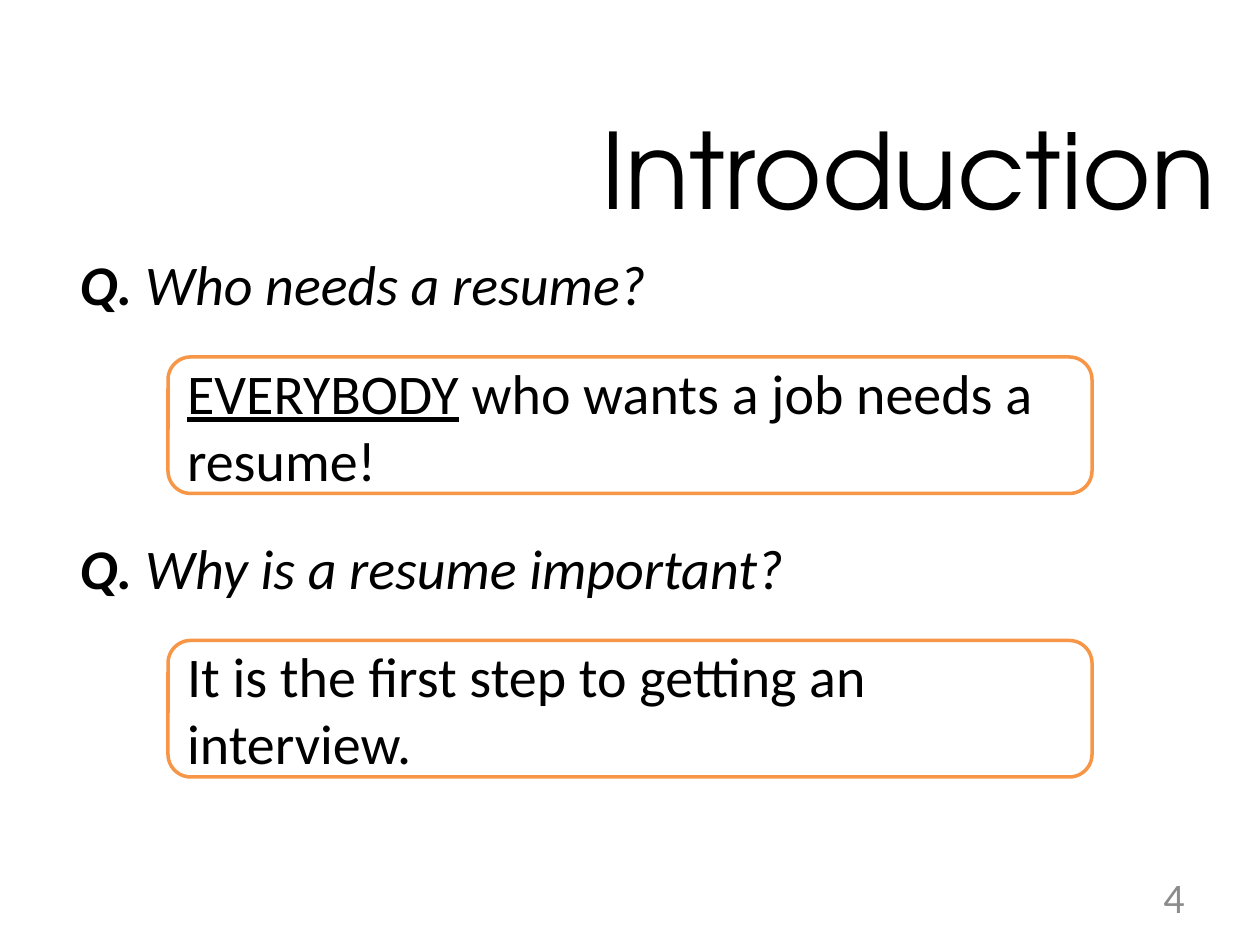
"""Build the introduction slide: two resume questions, each with a framed answer."""
from pptx import Presentation
from pptx import util as u
from pptx.dml.color import RGBColor
from pptx.enum import shapes, text

COLOURS = {"ink": "000000", "paper": "FFFFFF", "frame": "F79646", "number": "8C8C8C"}
COLUMNS, ROWS = 120, 90
QUESTION_TOP, ANSWER_TOP, PAIR_STEP = 21.5, 34, 27

deck = Presentation()
deck.slide_width, deck.slide_height = u.Inches(10), u.Inches(7.5)
column, row = deck.slide_width / COLUMNS, deck.slide_height / ROWS
page = deck.slides.add_slide(deck.slide_layouts[5])


def cells(left, top, width, height):
    return [int(left * column), int(top * row), int(width * column), int(height * row)]


def write(box, *spans, size=32, font="Calibri", colour="ink", align=text.PP_ALIGN.LEFT):
    frame = box.text_frame
    frame.word_wrap = True
    frame.auto_size = text.MSO_AUTO_SIZE.NONE
    frame.vertical_anchor = text.MSO_ANCHOR.MIDDLE
    para = frame.paragraphs[0]
    para.alignment = align
    for words, style in spans:
        span = para.add_run()
        span.text = words
        span.font.size, span.font.name = u.Pt(size), font
        span.font.color.rgb = RGBColor.from_string(COLOURS[colour])
        for name, value in style.items():
            setattr(span.font, name, value)


title = page.shapes.title
title.left, title.top, title.width, title.height = cells(53, 5, 67, 22)
write(title, ("Introduction", {}), size=60, font="TeX Gyre Adventor",
      align=text.PP_ALIGN.CENTER)

pairs = [
    ("Who needs a resume?",
     [("EVERYBODY", {"underline": True}), (" who wants a job needs a resume!", {})]),
    ("Why is a resume important?",
     [("It is the first step to getting an interview.", {})]),
]
for index, (question, answer) in enumerate(pairs):
    offset = index * PAIR_STEP
    answer_box = page.shapes.add_shape(
        shapes.MSO_SHAPE.ROUNDED_RECTANGLE, *cells(16, ANSWER_TOP + offset, 88, 13))
    question_box = page.shapes.add_shape(
        shapes.MSO_SHAPE.RECTANGLE, *cells(6.4, QUESTION_TOP + offset, 109, 11))
    for box in (answer_box, question_box):
        box.shadow.inherit = False
        box.fill.solid()
        box.fill.fore_color.rgb = RGBColor.from_string(COLOURS["paper"])
    answer_box.line.color.rgb = RGBColor.from_string(COLOURS["frame"])
    answer_box.line.width = u.Pt(2)
    question_box.line.fill.background()
    write(answer_box, *answer)
    write(question_box, ("Q. ", {"bold": True, "italic": True}),
          (question, {"italic": True}))

number_box = page.shapes.add_textbox(*cells(86, 83, 28, 4.8))
write(number_box, ("4", {}), size=24, colour="number", align=text.PP_ALIGN.RIGHT)

deck.save("out.pptx")
